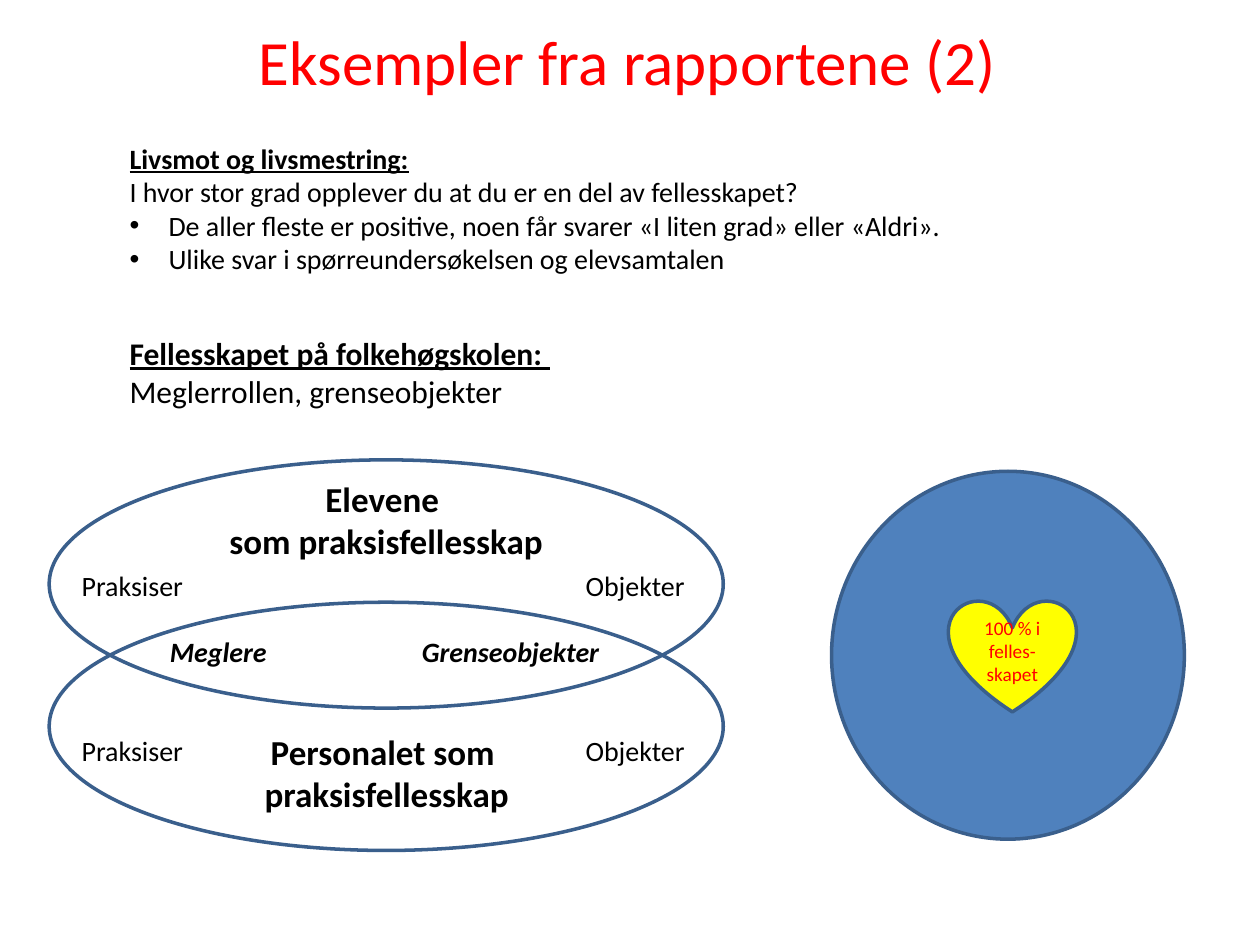
import pptx
import pptx.dml.color
import pptx.enum.shapes
import pptx.enum.text
import pptx.oxml
import pptx.util

Inches = pptx.util.Inches
Pt = pptx.util.Pt
RGBColor = pptx.dml.color.RGBColor
Shape = pptx.enum.shapes.MSO_SHAPE
Align = pptx.enum.text.PP_ALIGN

RED = RGBColor(0xFF, 0x00, 0x00)
BLACK = RGBColor(0x00, 0x00, 0x00)
BLUE = RGBColor(0x4F, 0x81, 0xBD)
OUTLINE = RGBColor(0x3A, 0x5F, 0x8C)
YELLOW = RGBColor(0xFF, 0xFF, 0x00)
NAMESPACE = pptx.oxml.ns.nsdecls("a")


def style(paragraph, size, color=BLACK, align=Align.LEFT, bold=False, italic=False):
    font = paragraph.font
    font.name = "Calibri"
    font.size = Pt(size)
    font.color.rgb = color
    font.bold = bold
    font.italic = italic
    paragraph.alignment = align


def add_text(shapes, box, lines, size, wrap=True, **look):
    frame = shapes.add_textbox(*map(Inches, box)).text_frame
    frame.word_wrap = wrap
    frame.text = "\n".join(lines)
    for paragraph in frame.paragraphs:
        style(paragraph, size, **look)
    return frame.paragraphs


def add_headed_text(shapes, box, lines, size):
    heading, *body = add_text(shapes, box, lines, size)
    heading.font.bold = True
    heading.font.underline = True
    return body


def add_bullet(paragraph):
    properties = paragraph._p.get_or_add_pPr()
    properties.set("marL", str(Inches(0.31)))
    properties.set("indent", str(-Inches(0.31)))
    properties.insert(0, pptx.oxml.parse_xml(f'<a:buFont {NAMESPACE} typeface="Arial"/>'))
    properties.insert(1, pptx.oxml.parse_xml(f'<a:buChar {NAMESPACE} char="•"/>'))


def add_tabbed_text(shapes, box, line, **look):
    paragraph = add_text(shapes, box, [line], 16, wrap=False, **look)[0]
    stops = "".join(f'<a:tab pos="{Inches(inch)}" algn="l"/>'
                    for inch in range(1, line.count("\t") + 1))
    paragraph._p.get_or_add_pPr().insert(
        0, pptx.oxml.parse_xml(f"<a:tabLst {NAMESPACE}>{stops}</a:tabLst>"))


def add_figure(shapes, kind, box, fill=None):
    figure = shapes.add_shape(kind, *map(Inches, box))
    figure.shadow.inherit = False
    if fill is None:
        figure.fill.background()
    else:
        figure.fill.solid()
        figure.fill.fore_color.rgb = fill
    figure.line.color.rgb = OUTLINE
    figure.line.width = Pt(2)
    return figure


def add_heart_circle(shapes):
    add_figure(shapes, Shape.OVAL, (6.6, 3.74, 2.8, 2.92), BLUE)
    heart = add_figure(shapes, Shape.HEART, (7.53, 4.76, 1.01, 0.89), YELLOW)
    frame = heart.text_frame
    frame.word_wrap = True
    frame.vertical_anchor = pptx.enum.text.MSO_ANCHOR.MIDDLE
    frame.text = "100 % i felles- skapet"
    style(frame.paragraphs[0], 11, RED, Align.CENTER)


def add_communities(shapes):
    for top in (3.65, 4.78):
        add_figure(shapes, Shape.OVAL, (0.39, top, 5.35, 1.97))
    for box, lines in (
        ((1.71, 3.74, 2.71, 0.77), ("Elevene ", "som praksisfellesskap")),
        ((1.99, 5.75, 2.16, 0.77), ("Personalet som ", "praksisfellesskap")),
    ):
        add_text(shapes, box, lines, 20, wrap=False, align=Align.CENTER, bold=True)
    add_tabbed_text(shapes, (1.25, 4.99, 3.64, 0.37), "Meglere \t\tGrenseobjekter",
                    bold=True, italic=True)
    for top in (5.77, 4.46):
        add_tabbed_text(shapes, (0.55, top, 5.04, 0.37), "Praksiser\t\t\t\tObjekter")


def main():
    deck = pptx.Presentation()
    deck.slide_width = Inches(10)
    deck.slide_height = Inches(7.5)
    shapes = deck.slides.add_slide(deck.slide_layouts[6]).shapes

    add_text(shapes, (0.48, 0.13, 9, 0.94), ["Eksempler fra rapportene (2)"], 36,
             color=RED, align=Align.CENTER)
    findings = add_headed_text(shapes, (0.93, 1.07, 8.1, 1.18), (
        "Livsmot og livsmestring:",
        "I hvor stor grad opplever du at du er en del av fellesskapet?",
        "De aller fleste er positive, noen får svarer «I liten grad» eller «Aldri».",
        "Ulike svar i spørreundersøkelsen og elevsamtalen",
    ), 16)
    for finding in findings[1:]:
        add_bullet(finding)

    add_heart_circle(shapes.add_group_shape().shapes)
    add_communities(shapes.add_group_shape().shapes)
    add_headed_text(shapes, (0.93, 2.6, 5, 0.71), (
        "Fellesskapet på folkehøgskolen: ",
        "Meglerrollen, grenseobjekter",
    ), 18)
    deck.save("out.pptx")


if __name__ == "__main__":
    main()
